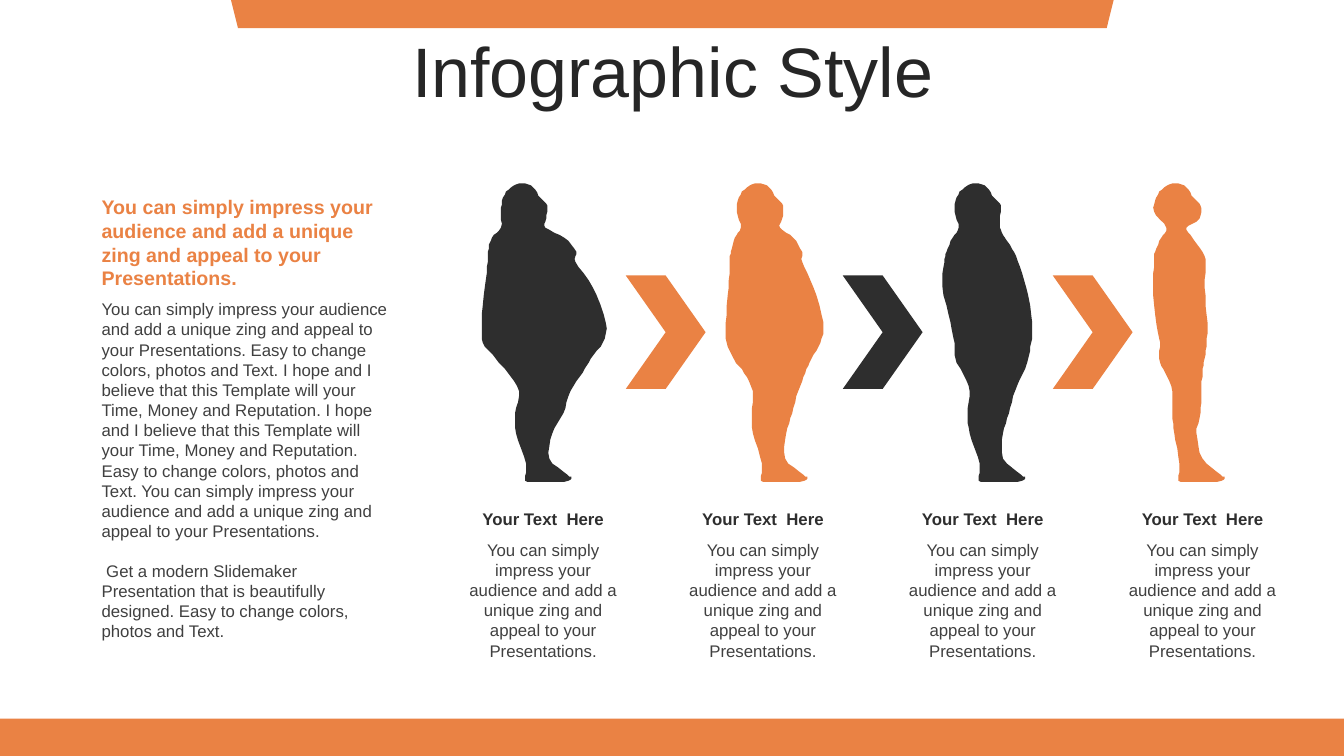
from pptx import Presentation
from pptx.dml.color import RGBColor
from pptx.enum.shapes import MSO_SHAPE
from pptx.enum.text import MSO_ANCHOR, MSO_AUTO_SIZE, PP_ALIGN
from pptx.util import Pt

ORANGE, DARK, GREY, TITLE_COLOR = "EA8244", "2E2E2E", "404040", "262626"

TITLE = "Infographic Style"
HEADING = ("You can simply impress your audience and add a unique zing "
           "and appeal to your Presentations.")
BODY = [
    "You can simply impress your audience and add a unique zing and appeal to your "
    "Presentations. Easy to change colors, photos and Text. I hope and I believe that "
    "this Template will your Time, Money and Reputation. I hope and I believe that this "
    "Template will your Time, Money and Reputation. Easy to change colors, photos and "
    "Text. You can simply impress your audience and add a unique zing and appeal to "
    "your Presentations.",
    " Get a modern Slidemaker Presentation that is beautifully designed. "
    "Easy to change colors, photos and Text.",
]
STAGES = [("Your Text  Here", HEADING)] * 4
CHEVRONS = [(447, ORANGE), (602, DARK), (752, ORANGE)]

# Outlines on a grid of 0.72 pt: all figures share head, foot and body heights
GRID = Pt(0.72)
HEAD = [(497, 210), (499, 196), (507, 186), (518, 182), (529, 186),
        (536, 196), (543, 204), (542, 217)]
FOOT = [(545, 455), (563, 471), (567, 474), (560, 478), (526, 478), (521, 474), (522, 460)]
HEIGHTS = [226, 236, 250, 260, 285, 320, 340, 356, 370, 388, 410, 430]
# Fill, shift of head and foot, back and front edge at each height
FIGURES = [
    (DARK, 0,
     [497, 488, 484, 484, 481, 478, 479, 492, 504, 515, 511, 512],
     [541, 560, 572, 571, 588, 601, 598, 586, 578, 566, 559, 548]),
    (ORANGE, 234,
     [735, 729, 725, 724, 723, 720, 721, 728, 738, 747, 746, 747],
     [774, 787, 796, 796, 807, 817, 814, 805, 799, 792, 786, 780]),
    (DARK, 450,
     [951, 945, 939, 937, 935, 943, 947, 948, 955, 962, 960, 962],
     [992, 997, 1006, 1010, 1018, 1024, 1023, 1020, 1015, 1007, 1001, 995]),
    (ORANGE, 648,
     [1157, 1152, 1146, 1145, 1144, 1147, 1151, 1150, 1156, 1163, 1163, 1165],
     [1177, 1183, 1193, 1196, 1195, 1198, 1197, 1195, 1193, 1192, 1191, 1187]),
]


def color(value):
    return RGBColor.from_string(value)


def paint(shape, fill):
    """Give the shape a plain fill without line or shadow."""
    shape.shadow.inherit = False
    shape.fill.solid()
    shape.fill.fore_color.rgb = color(fill)
    shape.line.fill.background()


def add_preset(kind, box, fill):
    shape = slide.shapes.add_shape(kind, *map(Pt, box))
    paint(shape, fill)
    return shape


def smooth(points, steps=4):
    """Return points on a closed Catmull-Rom curve through the given points."""
    curve = []
    for index in range(len(points)):
        a, b, c, d = (points[(index + k) % len(points)] for k in (-1, 0, 1, 2))
        for step in range(steps):
            t = step / steps
            curve.append(tuple(
                round(q + t / 2 * (r - p + t * (2 * p - 5 * q + 4 * r - s
                                                + t * (3 * (q - r) + s - p))), 2)
                for p, q, r, s in zip(a, b, c, d)))
    return curve


def add_figure(fill, shift, back, front):
    head, foot = ([(x + shift, y) for x, y in part] for part in (HEAD, FOOT))
    front_edge = list(zip(front, HEIGHTS))
    back_edge = list(zip(back, HEIGHTS))[::-1]
    outline = smooth(head + front_edge + foot + back_edge)
    builder = slide.shapes.build_freeform(*outline[0], scale=GRID)
    builder.add_line_segments(outline[1:], close=True)
    paint(builder.convert_to_shape(), fill)


def write(shape, texts, font, **paragraph_format):
    frame = shape.text_frame
    frame.word_wrap = True
    for index, text in enumerate(texts):
        paragraph = frame.add_paragraph() if index else frame.paragraphs[0]
        run = paragraph.add_run()
        run.text = text
        run.font.color.rgb = color(font["color"])
        for name, value in {"name": "Arial", "size": Pt(font["size"]),
                            "bold": font.get("bold", False)}.items():
            setattr(run.font, name, value)
        for name, value in paragraph_format.items():
            setattr(paragraph, name, value)
    return frame


def add_text(box, texts, font, **paragraph_format):
    shape = slide.shapes.add_textbox(*map(Pt, box))
    frame = write(shape, texts, font, **paragraph_format)
    frame.auto_size = MSO_AUTO_SIZE.SHAPE_TO_FIT_TEXT
    return frame


presentation = Presentation()
presentation.slide_width, presentation.slide_height = Pt(960), Pt(540)
slide = presentation.slides.add_slide(presentation.slide_layouts[5])

add_preset(MSO_SHAPE.RECTANGLE, (0, 513.4, 960, 26.6), ORANGE)
add_preset(MSO_SHAPE.TRAPEZOID, (165, 0, 630.5, 20), ORANGE).rotation = 180

title = slide.shapes.title
for name, value in zip(("left", "top", "width", "height"), (25, 26.6, 911.5, 57)):
    setattr(title, name, Pt(value))
title_frame = write(title, [TITLE], {"size": 50, "color": TITLE_COLOR},
                    alignment=PP_ALIGN.CENTER, line_spacing=0.8, space_before=Pt(10))
title_frame.auto_size = MSO_AUTO_SIZE.NONE
title_frame.vertical_anchor = MSO_ANCHOR.MIDDLE

add_text((65.5, 136, 219, 75), [HEADING], {"size": 14, "color": ORANGE, "bold": True})
body = add_text((65.5, 210, 219, 254), BODY, {"size": 12, "color": GREY})
body.paragraphs[1].space_before = Pt(14)

for figure in FIGURES:
    add_figure(*figure)

for left, fill in CHEVRONS:
    add_preset(MSO_SHAPE.CHEVRON, (left, 196.8, 57, 81), fill)

for index, (label, caption) in enumerate(STAGES):
    left = 322.5 + 157 * index
    add_text((left, 360, 131, 21.8), [label],
             {"size": 12, "color": DARK, "bold": True}, alignment=PP_ALIGN.CENTER)
    add_text((left, 381.8, 131, 94.5), [caption],
             {"size": 12, "color": GREY}, alignment=PP_ALIGN.CENTER)

presentation.save("out.pptx")
